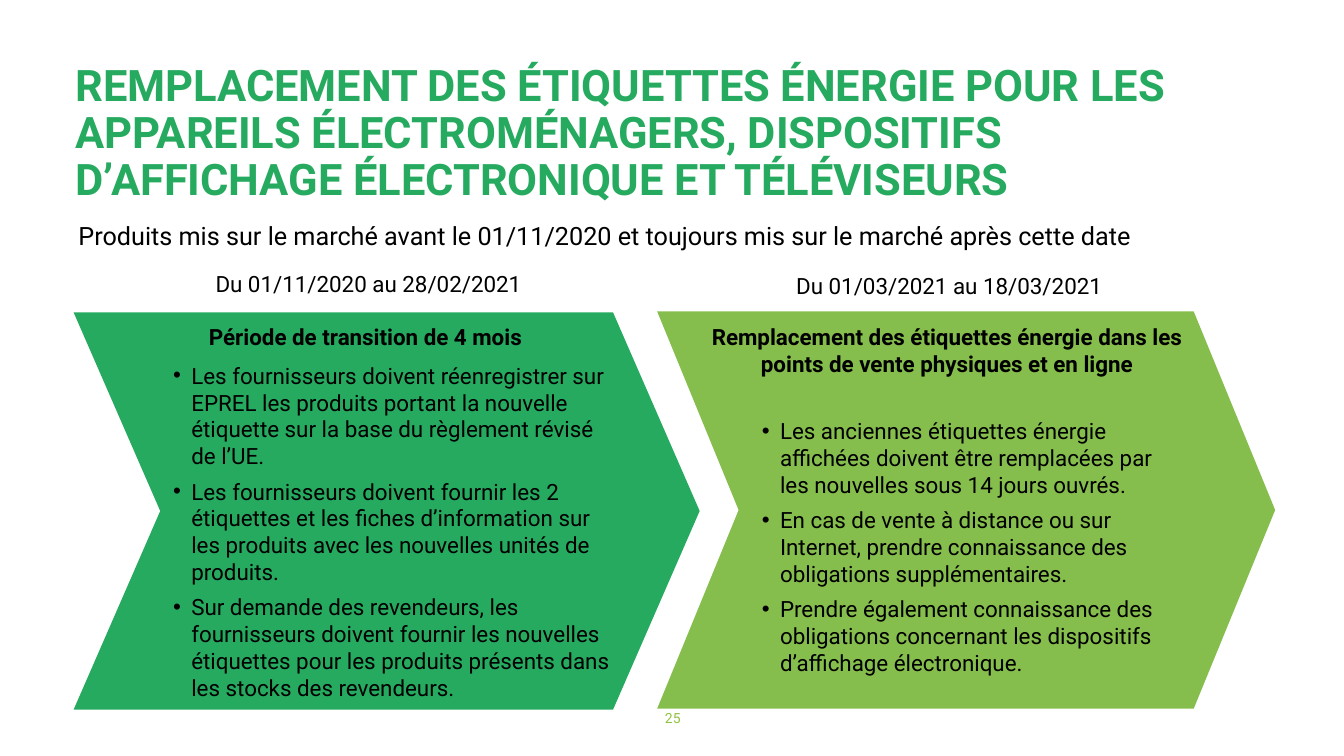
from dataclasses import dataclass

import pptx
import pptx.util
from lxml import etree
from pptx.dml.color import RGBColor
from pptx.enum.shapes import MSO_SHAPE
from pptx.enum.text import PP_ALIGN
from pptx.oxml.ns import qn


@dataclass(frozen=True)
class Theme:
    font: str = "Roboto"
    green: str = "26AA5F"
    lime: str = "85BE4C"
    page_lime: str = "91C33F"
    text: str = "000000"
    title_size: int = 31
    subtitle_size: int = 18
    body_size: int = 16
    page_size: int = 10


THEME = Theme()

# Boxes are left, top, width, height in percent of the slide's size.
TITLE = (
    "REMPLACEMENT DES ÉTIQUETTES ÉNERGIE POUR LES APPAREILS ÉLECTROMÉNAGERS, "
    "DISPOSITIFS D’AFFICHAGE ÉLECTRONIQUE ET TÉLÉVISEURS"
)
TITLE_BOX = (4.88, 7.87, 90.1, 19.47)
SUBTITLE = "Produits mis sur le marché avant le 01/11/2020 et toujours mis sur le marché après cette date"
SUBTITLE_BOX = (5.1, 28.53, 88.8, 5.33)
PAGE_NUMBER = "25"
PAGE_BOX = (47.48, 93.2, 3.9, 5.33)

PHASES = [
    {
        "arrow": (5.48, 41.33, 46.58, 52.53),
        "notch": 0.218,
        "color": THEME.green,
        "dates": "Du 01/11/2020 au 28/02/2021",
        "dates_box": (15.3, 35.07, 27.38, 4.93),
        "heading": "Période de transition de 4 mois",
        "heading_box": (13.58, 42.13, 27.23, 4.93),
        "points": [
            "Les fournisseurs doivent réenregistrer sur EPREL les produits portant la nouvelle "
            "étiquette sur la base du règlement révisé de l’UE.",
            "Les fournisseurs doivent fournir les 2 étiquettes et les fiches d’information sur "
            "les produits avec les nouvelles unités de produits.",
            "Sur demande des revendeurs, les fournisseurs doivent fournir les nouvelles étiquettes "
            "pour les produits présents dans les stocks des revendeurs.",
        ],
        "points_box": (10.65, 47.2, 36.15, 32.27),
    },
    {
        "arrow": (48.9, 41.2, 45.98, 52.53),
        "notch": 0.205,
        "color": THEME.lime,
        "dates": "Du 01/03/2021 au 18/03/2021",
        "dates_box": (58.5, 35.33, 25.05, 4.93),
        "heading": "Remplacement des étiquettes énergie dans les points de vente physiques et en ligne",
        "heading_box": (52.05, 42.13, 36.83, 8.53),
        "points": [
            "Les anciennes étiquettes énergie affichées doivent être remplacées par les nouvelles "
            "sous 14 jours ouvrés.",
            "En cas de vente à distance ou sur Internet, prendre connaissance des obligations "
            "supplémentaires.",
            "Prendre également connaissance des obligations concernant les dispositifs "
            "d’affichage électronique.",
        ],
        "points_box": (54.45, 54.53, 33.3, 21.6),
    },
]

presentation = pptx.Presentation()
presentation.slide_width = pptx.util.Inches(13.33)
presentation.slide_height = pptx.util.Inches(7.5)
slide = presentation.slides.add_slide(presentation.slide_layouts[6])


def place(box):
    """Turn percentages of the slide into lengths."""
    sides = (presentation.slide_width, presentation.slide_height) * 2
    return [int(side * share / 100) for side, share in zip(sides, box)]


def add_bullet(paragraph):
    properties = paragraph._p.get_or_add_pPr()
    properties.set("marL", str(pptx.util.Inches(0.38)))
    properties.set("indent", str(pptx.util.Inches(-0.18)))
    etree.SubElement(properties, qn("a:buFont"), typeface="Arial")
    etree.SubElement(properties, qn("a:buChar"), char="•")
    paragraph.space_after = pptx.util.Pt(6)


def add_text(box, lines, size, color=THEME.text, bold=False,
             align=PP_ALIGN.LEFT, bullets=False, line_spacing=None):
    text_frame = slide.shapes.add_textbox(*place(box)).text_frame
    text_frame.word_wrap = True
    text_frame.text = "\n".join(lines)
    for paragraph in text_frame.paragraphs:
        if bullets:
            add_bullet(paragraph)
        paragraph.alignment = align
        paragraph.line_spacing = line_spacing
        for run in paragraph.runs:
            run.font.name = THEME.font
            run.font.size = pptx.util.Pt(size)
            run.font.bold = bold
            run.font.color.rgb = RGBColor.from_string(color)


def add_arrow(box, notch, color):
    shape = slide.shapes.add_shape(MSO_SHAPE.CHEVRON, *place(box))
    shape.adjustments[0] = notch
    shape.shadow.inherit = False
    shape.fill.solid()
    shape.fill.fore_color.rgb = RGBColor.from_string(color)
    shape.line.fill.background()


add_text(TITLE_BOX, [TITLE], THEME.title_size, THEME.green, bold=True, line_spacing=0.9)
add_text(SUBTITLE_BOX, [SUBTITLE], THEME.subtitle_size)
add_text(PAGE_BOX, [PAGE_NUMBER], THEME.page_size, THEME.page_lime, align=PP_ALIGN.RIGHT)

for phase in PHASES:
    add_arrow(phase["arrow"], phase["notch"], phase["color"])
    add_text(phase["dates_box"], [phase["dates"]], THEME.body_size)
    add_text(phase["heading_box"], [phase["heading"]], THEME.body_size,
             bold=True, align=PP_ALIGN.CENTER)
    add_text(phase["points_box"], phase["points"], THEME.body_size, bullets=True)

presentation.save("out.pptx")
